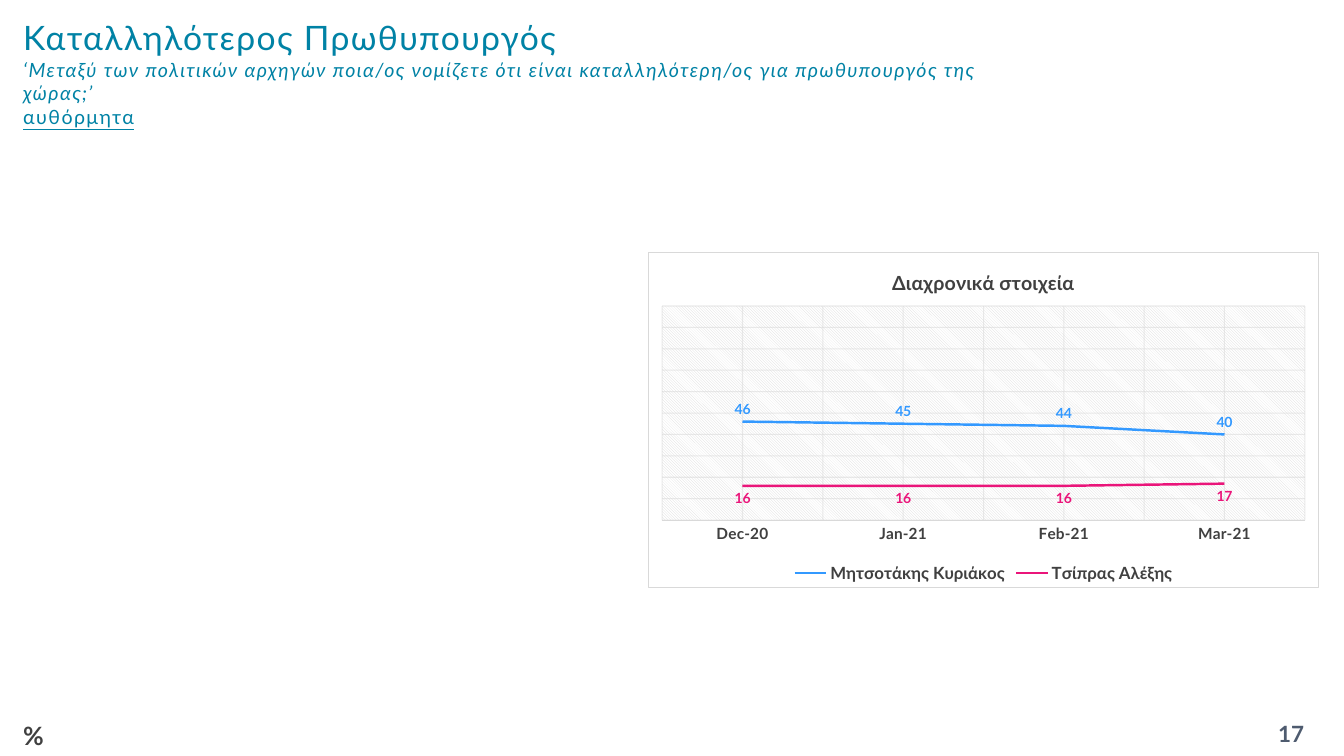
from dataclasses import dataclass

from pptx import Presentation
from pptx.chart.data import CategoryChartData
from pptx.dml.color import RGBColor
from pptx.enum import chart as charts, text
from pptx.oxml import parse_xml
from pptx.oxml.ns import nsdecls, qn
from pptx.util import Inches, Pt

FONT = "Lato"
TEAL, SLATE, CHARCOAL, GREY = "0082A5", "4E5B6F", "404040", "D9D9D9"
MONTHS = ["Dec-20", "Jan-21", "Feb-21", "Mar-21"]


@dataclass
class Leader:
    name: str
    values: list[int]
    color: str
    label_position: charts.XL_LABEL_POSITION


@dataclass
class Corner:
    label: str
    left: float
    width: float
    size: int
    color: str
    align: text.PP_ALIGN


LEADERS = [
    Leader("Μητσοτάκης Κυριάκος", [46, 45, 44, 40], "3399FF", charts.XL_LABEL_POSITION.ABOVE),
    Leader("Τσίπρας Αλέξης", [16, 16, 16, 17], "EA157A", charts.XL_LABEL_POSITION.BELOW),
]
CORNERS = [
    Corner("17", 12.28, 1.05, 16, SLATE, text.PP_ALIGN.CENTER),
    Corner("%", 0.13, 0.71, 18, CHARCOAL, text.PP_ALIGN.LEFT),
]


def rgb(color: str) -> RGBColor:
    return RGBColor.from_string(color)


def style_font(font, size: float, color: str, bold: bool = False) -> None:
    font.name, font.size, font.bold = FONT, Pt(size), bold
    font.color.rgb = rgb(color)


def add_text(paragraph, content: str, *, size: float, color: str, bold: bool = False,
             italic: bool = False, underline: bool = False, spacing: float = 0) -> None:
    run = paragraph.add_run()
    run.text = content
    style_font(run.font, size, color, bold)
    run.font.italic, run.font.underline = italic, underline
    if spacing:
        run.font._element.set("spc", str(int(spacing * 100)))


def style_grid(axis) -> None:
    """Give the major and minor gridlines of an axis a thin, translucent line."""
    for tag in ("c:majorGridlines", "c:minorGridlines"):
        for gridlines in axis._element.findall(qn(tag)):
            gridlines.append(parse_xml(
                f'<c:spPr {nsdecls("c", "a")}><a:ln w="{Pt(0.75)}"><a:solidFill>'
                f'<a:srgbClr val="{GREY}"><a:alpha val="54000"/></a:srgbClr>'
                '</a:solidFill></a:ln></c:spPr>'))


def add_title(slide) -> None:
    title = slide.shapes.title
    title.left, title.top, title.width, title.height = map(Inches, (0.13, 0.13, 9.82, 1.18))
    frame = title.text_frame
    frame.word_wrap, frame.auto_size = True, text.MSO_AUTO_SIZE.NONE
    frame.vertical_anchor = text.MSO_ANCHOR.MIDDLE
    paragraph = frame.paragraphs[0]
    paragraph.alignment = text.PP_ALIGN.LEFT
    add_text(paragraph, "Καταλληλότερος Πρωθυπουργός", size=24, color=TEAL, spacing=1)
    paragraph.add_line_break()
    add_text(paragraph, "‘Μεταξύ των πολιτικών αρχηγών ποια/ος νομίζετε ότι είναι "
             "καταλληλότερη/ος για πρωθυπουργός της χώρας;’",
             size=14, color=TEAL, italic=True, spacing=1)
    paragraph.add_line_break()
    add_text(paragraph, "αυθόρμητα", size=14, color=TEAL, underline=True, spacing=1)


def add_corner(slide, corner: Corner) -> None:
    box = slide.shapes.add_textbox(Inches(corner.left), Inches(7.1),
                                   Inches(corner.width), Inches(0.4))
    box.text_frame.word_wrap = True
    paragraph = box.text_frame.paragraphs[0]
    paragraph.alignment = corner.align
    add_text(paragraph, corner.label, size=corner.size, color=corner.color, bold=True)


def fill_backgrounds(chart) -> None:
    """Frame the chart, hatch the plot and fix the plot's place."""
    space = chart._chartSpace
    space.find(qn("c:chart")).addnext(parse_xml(
        f'<c:spPr {nsdecls("c", "a")}><a:solidFill><a:srgbClr val="FFFFFF"/></a:solidFill>'
        f'<a:ln w="{Pt(0.75)}"><a:solidFill><a:srgbClr val="{GREY}"/></a:solidFill></a:ln>'
        '</c:spPr>'))
    plot_area = space.find(".//" + qn("c:plotArea"))
    plot_area.append(parse_xml(
        f'<c:spPr {nsdecls("c", "a")}><a:pattFill prst="ltDnDiag">'
        f'<a:fgClr><a:srgbClr val="{GREY}"/></a:fgClr>'
        '<a:bgClr><a:srgbClr val="FFFFFF"/></a:bgClr></a:pattFill></c:spPr>'))
    for layout in plot_area.findall(qn("c:layout")):
        plot_area.remove(layout)
    place = {"x": 0.02, "y": 0.16, "w": 0.96, "h": 0.64}
    modes = "".join(f'<c:{key}Mode val="edge"/>' for key in "xy")
    sizes = "".join(f'<c:{key} val="{value}"/>' for key, value in place.items())
    plot_area.insert(0, parse_xml(
        f'<c:layout {nsdecls("c")}><c:manualLayout><c:layoutTarget val="inner"/>'
        f'{modes}{sizes}</c:manualLayout></c:layout>'))


def add_trend_chart(slide) -> None:
    data = CategoryChartData(number_format="0")
    data.categories = MONTHS
    for leader in LEADERS:
        data.add_series(leader.name, leader.values)
    chart = slide.shapes.add_chart(charts.XL_CHART_TYPE.LINE, Inches(6.43), Inches(2.5),
                                   Inches(6.65), Inches(3.33), data).chart
    style_font(chart.font, 10, "000000")

    # Title and legend
    chart.has_title = True
    add_text(chart.chart_title.text_frame.paragraphs[0], "Διαχρονικά στοιχεία",
             size=14, color=CHARCOAL, bold=True)
    chart.chart_title.include_in_layout = False
    chart.has_legend = True
    chart.legend.position = charts.XL_LEGEND_POSITION.BOTTOM
    chart.legend.include_in_layout = False
    style_font(chart.legend.font, 12, CHARCOAL, bold=True)

    # Axes
    months, percent = chart.category_axis, chart.value_axis
    percent.minimum_scale, percent.maximum_scale, percent.major_unit = 0, 100, 10
    percent.visible = False
    percent.has_major_gridlines = True
    months.has_major_gridlines = months.has_minor_gridlines = True
    months.major_tick_mark = months.minor_tick_mark = charts.XL_TICK_MARK.NONE
    months.format.line.color.rgb, months.format.line.width = rgb(GREY), Pt(0.75)
    style_font(months.tick_labels.font, 11, CHARCOAL, bold=True)
    for axis in (months, percent):
        style_grid(axis)

    # Series
    chart.plots[0].vary_by_categories = False
    for series, leader in zip(chart.plots[0].series, LEADERS):
        series.smooth = False
        series.marker.style = charts.XL_MARKER_STYLE.NONE
        series.format.line.color.rgb = rgb(leader.color)
        series.format.line.width = Pt(1.75)
        labels = series.data_labels
        labels.show_value, labels.position = True, leader.label_position
        labels.number_format, labels.number_format_is_linked = "0", False
        style_font(labels.font, 10, leader.color, bold=True)

    fill_backgrounds(chart)


def main() -> None:
    presentation = Presentation()
    presentation.slide_width, presentation.slide_height = Inches(13.33), Inches(7.5)
    slide = presentation.slides.add_slide(presentation.slide_layouts.get_by_name("Title Only"))
    add_title(slide)
    for corner in CORNERS:
        add_corner(slide, corner)
    add_trend_chart(slide)
    presentation.save("out.pptx")


if __name__ == "__main__":
    main()
